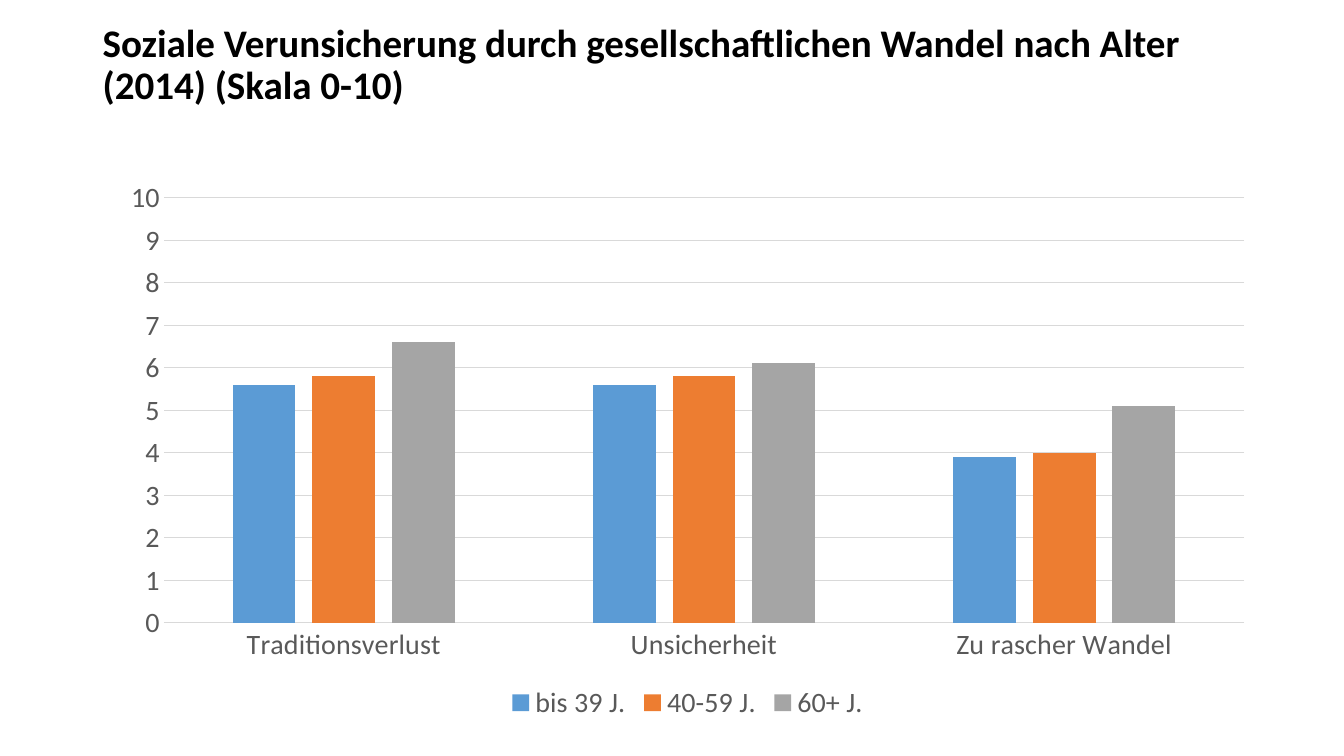
from pptx import Presentation
from pptx.chart.data import CategoryChartData
from pptx.dml.color import RGBColor
from pptx.enum.chart import XL_CHART_TYPE, XL_LEGEND_POSITION, XL_TICK_MARK
from pptx.enum.text import MSO_ANCHOR
from pptx.util import Inches, Pt

COLUMNS = XL_CHART_TYPE.COLUMN_CLUSTERED
LEGEND_BOTTOM = XL_LEGEND_POSITION.BOTTOM
NO_TICK = XL_TICK_MARK.NONE
MIDDLE = MSO_ANCHOR.MIDDLE

COLORS = {
    "title": "000000",
    "label": "595959",
    "grid": "D9D9D9",
    "bis 39 J.": "5B9BD5",
    "40-59 J.": "ED7D31",
    "60+ J.": "A5A5A5",
}
CONCERNS = ["Traditionsverlust", "Unsicherheit", "Zu rascher Wandel"]
AGE_GROUPS = {
    "bis 39 J.": (5.6, 5.6, 3.9),
    "40-59 J.": (5.8, 5.8, 4.0),
    "60+ J.": (6.6, 6.1, 5.1),
}


class SlideBuilder:
    def __init__(self, slide, font_name="Calibri"):
        self.slide = slide
        self.font_name = font_name

    def style_font(self, font, size, color, bold=False):
        font.name = self.font_name
        font.size = Pt(size)
        font.bold = bold
        font.color.rgb = RGBColor.from_string(COLORS[color])

    def style_line(self, line):
        line.color.rgb = RGBColor.from_string(COLORS["grid"])
        line.width = Pt(0.75)

    def title(self, text, left, top, width, height):
        box = self.slide.shapes.add_textbox(
            Inches(left), Inches(top), Inches(width), Inches(height))
        frame = box.text_frame
        frame.word_wrap = True
        frame.vertical_anchor = MIDDLE
        frame.margin_top = frame.margin_bottom = 0
        frame.text = text
        heading = frame.paragraphs[0]
        heading.line_spacing = 0.9
        self.style_font(heading.runs[0].font, 27.9, "title", bold=True)

    def column_chart(self, categories, groups, left, top, width, height):
        data = CategoryChartData(number_format="General")
        data.categories = categories
        for name, scores in groups.items():
            data.add_series(name, scores)
        chart = self.slide.shapes.add_chart(
            COLUMNS, Inches(left), Inches(top), Inches(width), Inches(height), data).chart
        chart.has_title = False
        self.style_font(chart.font, 10, "title")

        # Columns
        plot = chart.plots[0]
        plot.gap_width = 219
        plot.overlap = -27
        plot.vary_by_categories = False
        for series in plot.series:
            series.invert_if_negative = False
            series.format.fill.solid()
            series.format.fill.fore_color.rgb = RGBColor.from_string(COLORS[series.name])

        # Axes
        for axis in (chart.category_axis, chart.value_axis):
            axis.major_tick_mark = axis.minor_tick_mark = NO_TICK
            self.style_font(axis.tick_labels.font, 20, "label")
        self.style_line(chart.category_axis.format.line)
        scale = chart.value_axis
        scale.minimum_scale, scale.maximum_scale, scale.major_unit = 0, 10, 1
        scale.format.line.fill.background()
        scale.has_major_gridlines = True
        self.style_line(scale.major_gridlines.format.line)

        # Legend
        chart.has_legend = True
        chart.legend.position = LEGEND_BOTTOM
        chart.legend.include_in_layout = False
        self.style_font(chart.legend.font, 20, "label")


def main():
    presentation = Presentation()
    presentation.slide_width = Inches(13.33)
    presentation.slide_height = Inches(7.5)
    builder = SlideBuilder(presentation.slides.add_slide(presentation.slide_layouts[6]))

    # Heading
    builder.title(
        "Soziale Verunsicherung durch gesellschaftlichen Wandel nach Alter (2014) (Skala 0-10)",
        0.92, 0.2, 11.5, 0.9)

    # Scores by age group
    builder.column_chart(CONCERNS, AGE_GROUPS, 1.07, 1.68, 11.5, 5.52)

    presentation.save("out.pptx")


if __name__ == "__main__":
    main()
